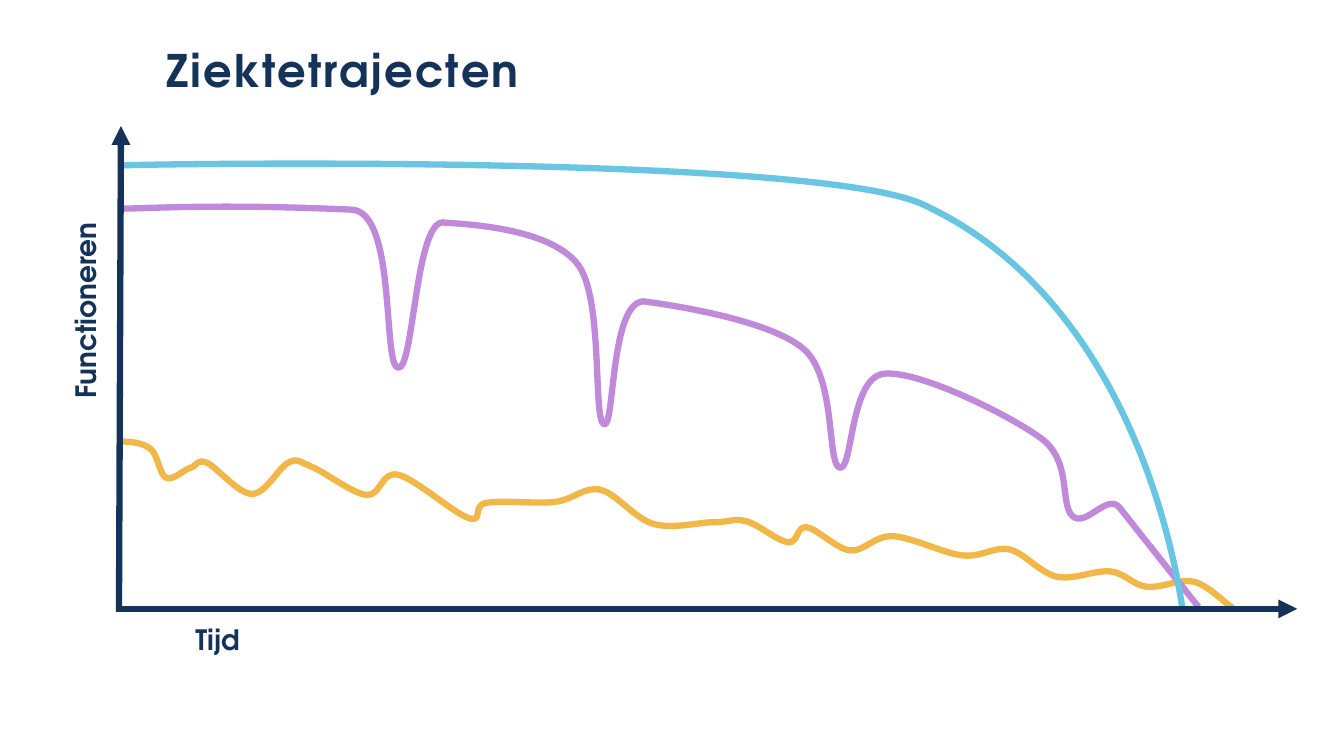
"""Build the slide "Ziektetrajecten": three smooth illness trajectories over time."""
from lxml.etree import SubElement
from pptx import Presentation
from pptx.dml.color import RGBColor
from pptx.enum.shapes import MSO_CONNECTOR
from pptx.enum.text import MSO_ANCHOR
from pptx.oxml.ns import qn
from pptx.util import Pt

NAVY = RGBColor(0x15, 0x33, 0x59)
ORANGE = RGBColor(0xF1, 0xB7, 0x49)
PURPLE = RGBColor(0xC0, 0x89, 0xDA)
BLUE = RGBColor(0x68, 0xC6, 0xE2)
FONT = "TeX Gyre Adventor"
LINE_WIDTH = Pt(4.5)
CURVE_UNIT = Pt(0.72)
LABEL_SIZE = (174.2, 31.7)
ORIGIN_X, TIME_AXIS_Y = 85, 434.9

frail = [
    (118, 438), (149, 445), (165, 474), (189, 464), (205, 459), (250, 490), (286, 459),
    (309, 463), (364, 491), (395, 471), (465, 514), (482, 499), (550, 498), (596, 486),
    (649, 520), (709, 518), (740, 517), (782, 538), (800, 523), (843, 546), (886, 532),
    (955, 551), (1001, 545), (1048, 572), (1102, 567), (1137, 582), (1184, 577), (1223, 603),
]

plateau_ends = [(348, 208), (573, 262), (797, 346), (1033, 435)]
crises = [(395, 365), (599, 421), (833, 464), (1064, 512)]
recoveries = [(442, 221), (638, 299), (876, 371), (1111, 504)]
episodic = [(120, 207)]
for episode in zip(plateau_ends, crises, recoveries):
    episodic.extend(episode)
episodic.append((1189, 602))

sudden = [(123, 164), (916, 203), (1173, 603)]

frail_handles = {frail[0]: ((0, 0), (12, 0))}
episodic_handles = {
    episodic[0]: ((0, 0), (24, 0)),
    plateau_ends[0]: ((132, 6), (46, 0)),
    recoveries[0]: ((30, 9), (34, 2)),
    recoveries[1]: ((33, -2), (32, 4)),
    recoveries[3]: ((12, 16), (26, 33)),
}
sudden_handles = {
    sudden[0]: ((0, 0), (127, -3)),
    sudden[1]: ((98, 46), (179, 83)),
    sudden[2]: ((17, 110), (0, 0)),
}


def add_curve(knots, handles, color):
    controls = []
    for before, (x, y), after in zip(knots[:1] + knots, knots, knots[1:] + knots[-1:]):
        tangent = ((after[0] - before[0]) / 6, (after[1] - before[1]) / 6)
        (in_x, in_y), (out_x, out_y) = handles.get((x, y), (tangent, tangent))
        controls += [(x - in_x, y - in_y), (x, y), (x + out_x, y + out_y)]
    start, *bezier_points = controls[1:-1]
    builder = s.shapes.build_freeform(*start, scale=CURVE_UNIT)
    builder.add_line_segments(bezier_points, close=False)
    sp = builder.convert_to_shape()
    sp.shadow.inherit = False
    sp.fill.background()
    sp.line.color.rgb = color
    sp.line.width = LINE_WIDTH
    segments = list(sp._element.iter(qn("a:lnTo")))
    for i in range(0, len(segments), 3):
        bezier = SubElement(segments[i].getparent(), qn("a:cubicBezTo"))
        for segment in segments[i:i + 3]:
            bezier.append(segment[0])
            segment.getparent().remove(segment)


def add_label(text, left, top, width, height, size):
    sp = s.shapes.add_textbox(Pt(left), Pt(top), Pt(width), Pt(height))
    sp.text_frame.word_wrap = True
    p = sp.text_frame.paragraphs[0]
    p.text = text
    p.font.name = FONT
    p.font.size = Pt(size)
    p.font.bold = True
    p.font.color.rgb = NAVY
    return sp


prs = Presentation()
prs.slide_width, prs.slide_height = Pt(960), Pt(540)
s = prs.slides.add_slide(prs.slide_layouts[6])

add_curve(frail, frail_handles, ORANGE)
add_curve(episodic, episodic_handles, PURPLE)
add_curve(sudden, sudden_handles, BLUE)

time_axis = (ORIGIN_X, TIME_AXIS_Y, 926.6, TIME_AXIS_Y)
function_axis = (ORIGIN_X, 437, 86.4, 90)
for ends in (time_axis, function_axis):
    axis = s.shapes.add_connector(MSO_CONNECTOR.STRAIGHT, *map(Pt, ends))
    axis.line.color.rgb = NAVY
    axis.line.width = LINE_WIDTH
    SubElement(axis.line._get_or_add_ln(), qn("a:tailEnd"), type="triangle")
    SubElement(axis._element.spPr, qn("a:effectLst"))

function_label = add_label("Functioneren", -25.9, 188.6, *LABEL_SIZE, 20)
function_label.rotation = 270
add_label("Tijd", 132.5, 441.4, *LABEL_SIZE, 20)

title = add_label("Ziektetrajecten", 111.6, 0, 787.7, 104.4, 32)
tf = title.text_frame
tf.vertical_anchor = MSO_ANCHOR.MIDDLE
p = tf.paragraphs[0]
p.line_spacing = 0.9
r = p.runs[0]
r._r.get_or_add_rPr().set("spc", "150")

prs.save("out.pptx")
